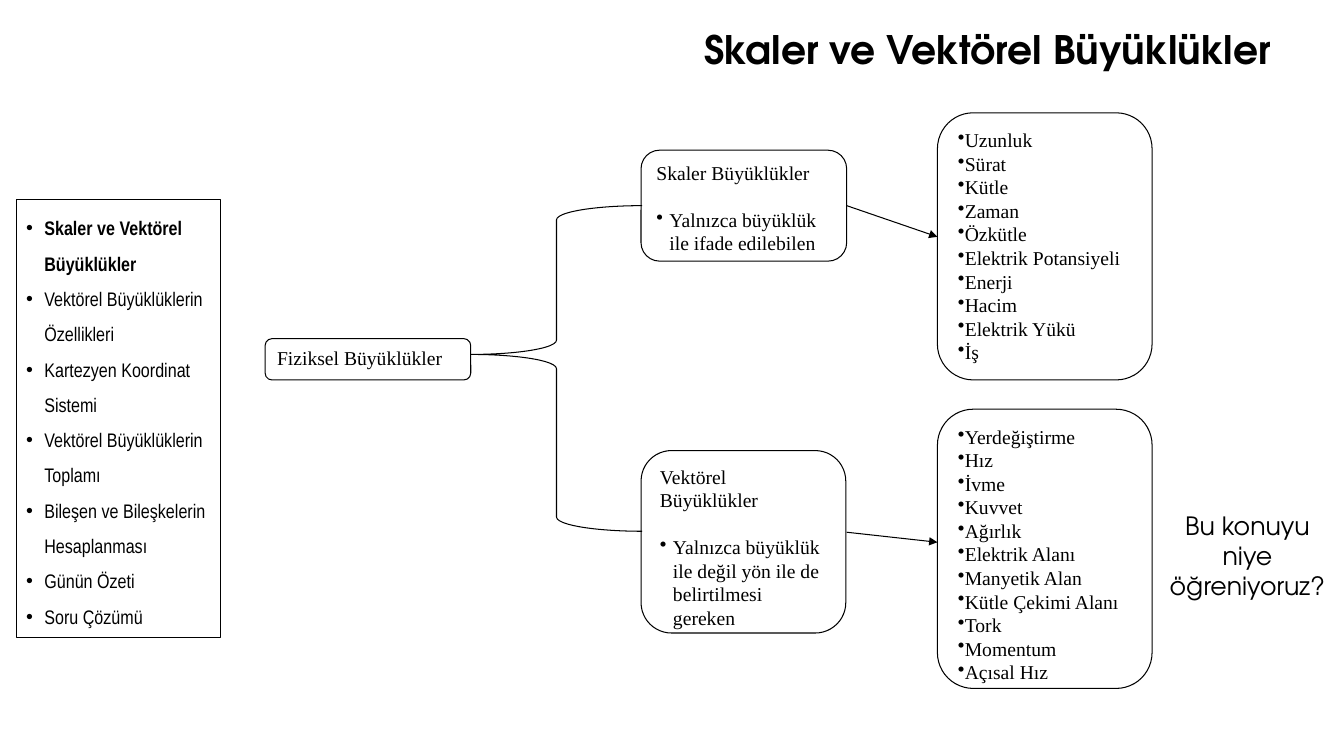
"""Build the slide on scalar and vector quantities."""
from dataclasses import dataclass

import pptx
import pptx.dml.color
import pptx.enum.shapes
import pptx.enum.text
import pptx.oxml
import pptx.oxml.ns
import pptx.util

TITLE = ("Skaler ve Vektörel Büyüklükler", (51.68, 2.67, 46.05, 7.6))
AGENDA = [
    "Skaler ve Vektörel Büyüklükler",
    "Vektörel Büyüklüklerin Özellikleri",
    "Kartezyen Koordinat Sistemi",
    "Vektörel Büyüklüklerin Toplamı",
    "Bileşen ve Bileşkelerin Hesaplanması",
    "Günün Özeti",
    "Soru Çözümü",
]
AGENDA_AREA = (1.2, 26.4, 15.23, 57.87)
ROOT = ("Fiziksel Büyüklükler", (19.73, 44.8, 15.3, 5.47))
BRACE_AREA = (35.03, 27.2, 12.75, 43.07)
BRACE_ADJUSTMENTS = (0.083, 0.457)
BRANCHES = [
    {
        "name": "Skaler Büyüklükler",
        "meaning": "Yalnızca büyüklük ile ifade edilebilen",
        "area": (47.7, 19.87, 15.3, 14.67),
        "examples": ["Uzunluk", "Sürat", "Kütle", "Zaman", "Özkütle",
                     "Elektrik Potansiyeli", "Enerji", "Hacim",
                     "Elektrik Yükü", "İş"],
        "examples_area": (69.75, 14.93, 15.97, 35.33),
        "arrow": (27.2, 31.33),
        "joined": True,
    },
    {
        "name": "Vektörel Büyüklükler",
        "meaning": "Yalnızca büyüklük ile değil yön ile de belirtilmesi gereken",
        "area": (47.7, 59.6, 15.23, 24.13),
        "examples": ["Yerdeğiştirme", "Hız", "İvme", "Kuvvet", "Ağırlık",
                     "Elektrik Alanı", "Manyetik Alan", "Kütle Çekimi Alanı",
                     "Tork", "Momentum", "Açısal Hız"],
        "examples_area": (69.75, 54.13, 15.97, 36.93),
        "arrow": (70.4, 71.73),
        "joined": False,
    },
]
ARROW_COLUMNS = (63, 69.75)
QUESTION = ("Bu konuyu niye öğreniyoruz?", (86.03, 66.8, 13.57, 13.47))


@dataclass(frozen=True)
class Theme:
    """Colours, fonts and sizes of the slide."""
    ink = pptx.dml.color.RGBColor(0, 0, 0)
    paper = pptx.dml.color.RGBColor(255, 255, 255)
    display_font = "TeX Gyre Adventor"
    agenda_font = "Arial Narrow"
    diagram_font = "Times New Roman"
    title_size = 28
    question_size = 18
    text_size = 14
    line_width = 0.75
    heading_gap = 16.8
    corner = 0.167


THEME = Theme()
ALIGN = pptx.enum.text.PP_ALIGN
SHAPE = pptx.enum.shapes.MSO_SHAPE

presentation = pptx.Presentation()
presentation.slide_width = pptx.util.Inches(13.33)
presentation.slide_height = pptx.util.Inches(7.5)
slide = presentation.slides.add_slide(presentation.slide_layouts[1])


def across(share):
    """Turn a percentage of the slide's width into a length."""
    return round(presentation.slide_width * share / 100)


def down(share):
    """Turn a percentage of the slide's height into a length."""
    return round(presentation.slide_height * share / 100)


def box(area):
    """Turn shares of the slide into left, top, width and height."""
    left, top, width, height = area
    return across(left), down(top), across(width), down(height)


def place(shape, area):
    """Move a shape to its area."""
    shape.left, shape.top, shape.width, shape.height = box(area)


def outline(shape):
    """Give a shape or connector the thin dark line."""
    shape.line.color.rgb = THEME.ink
    shape.line.width = pptx.util.Pt(THEME.line_width)


def prepare(shape):
    """Return the text frame, wrapped and set from the top."""
    frame = shape.text_frame
    frame.word_wrap = True
    frame.auto_size = pptx.enum.text.MSO_AUTO_SIZE.NONE
    frame.vertical_anchor = pptx.enum.text.MSO_ANCHOR.TOP
    return frame


def write(frame, text, font, size, bold=False, align=ALIGN.LEFT,
          hanging=None, spacing=1.0):
    """Add one paragraph; a hanging indent, even zero, gives it a bullet."""
    first = frame.paragraphs[0]
    paragraph = frame.add_paragraph() if first.runs else first
    paragraph.alignment = align
    paragraph.line_spacing = spacing
    paragraph.space_before = pptx.util.Pt(0)
    if hanging is not None:
        properties = paragraph._p.get_or_add_pPr()
        indent = pptx.util.Inches(hanging)
        properties.set("marL", str(indent))
        properties.set("indent", str(-indent))
        bullet = pptx.oxml.parse_xml(
            f'<a:buChar {pptx.oxml.ns.nsdecls("a")} char="•"/>')
        properties.append(bullet)
    run = paragraph.add_run()
    run.text = text
    run.font.name = font
    run.font.size = pptx.util.Pt(size)
    run.font.bold = bold
    run.font.color.rgb = THEME.ink
    return paragraph


def add_card(area):
    """Add a rounded card and return it."""
    card = slide.shapes.add_shape(SHAPE.ROUNDED_RECTANGLE, *box(area))
    card.adjustments[0] = THEME.corner
    card.shadow.inherit = False
    card.fill.solid()
    card.fill.fore_color.rgb = THEME.paper
    outline(card)
    return card


def add_arrow(rows, source):
    """Add an arrow, joined to the source's right side if there is one."""
    start, end = ARROW_COLUMNS
    arrow = slide.shapes.add_connector(
        pptx.enum.shapes.MSO_CONNECTOR.STRAIGHT,
        across(start), down(rows[0]), across(end), down(rows[1]))
    if source is not None:
        arrow.begin_connect(source, 3)
    outline(arrow)
    names = pptx.oxml.ns.nsdecls("a")
    arrow.line._get_or_add_ln().append(
        pptx.oxml.parse_xml(f'<a:tailEnd {names} type="triangle"/>'))
    arrow._element.spPr.append(pptx.oxml.parse_xml(f"<a:effectLst {names}/>"))


def main():
    """Fill the slide and save it."""
    title, agenda = slide.placeholders
    place(title, TITLE[1])
    write(prepare(title), TITLE[0], THEME.display_font, THEME.title_size, bold=True)

    place(agenda, AGENDA_AREA)
    outline(agenda)
    agenda_frame = prepare(agenda)
    for number, topic in enumerate(AGENDA):
        write(agenda_frame, topic, THEME.agenda_font, THEME.text_size,
              bold=number == 0, hanging=0.18, spacing=1.5)

    diagram_type = (THEME.diagram_font, THEME.text_size)
    write(prepare(add_card(ROOT[1])), ROOT[0], *diagram_type)
    for branch in BRANCHES:
        card = add_card(branch["area"])
        frame = prepare(card)
        heading = write(frame, branch["name"], *diagram_type)
        heading.space_after = pptx.util.Pt(THEME.heading_gap)
        write(frame, branch["meaning"], *diagram_type, hanging=0.13)
        examples_frame = prepare(add_card(branch["examples_area"]))
        for example in branch["examples"]:
            write(examples_frame, example, *diagram_type, hanging=0)
        add_arrow(branch["arrow"], card if branch["joined"] else None)

    brace = slide.shapes.add_shape(SHAPE.LEFT_BRACE, *box(BRACE_AREA))
    for index, value in enumerate(BRACE_ADJUSTMENTS):
        brace.adjustments[index] = value
    brace.shadow.inherit = False
    brace.fill.background()
    outline(brace)

    question = slide.shapes.add_textbox(*box(QUESTION[1]))
    write(prepare(question), QUESTION[0], THEME.display_font,
          THEME.question_size, align=ALIGN.CENTER)
    presentation.save("out.pptx")


if __name__ == "__main__":
    main()
